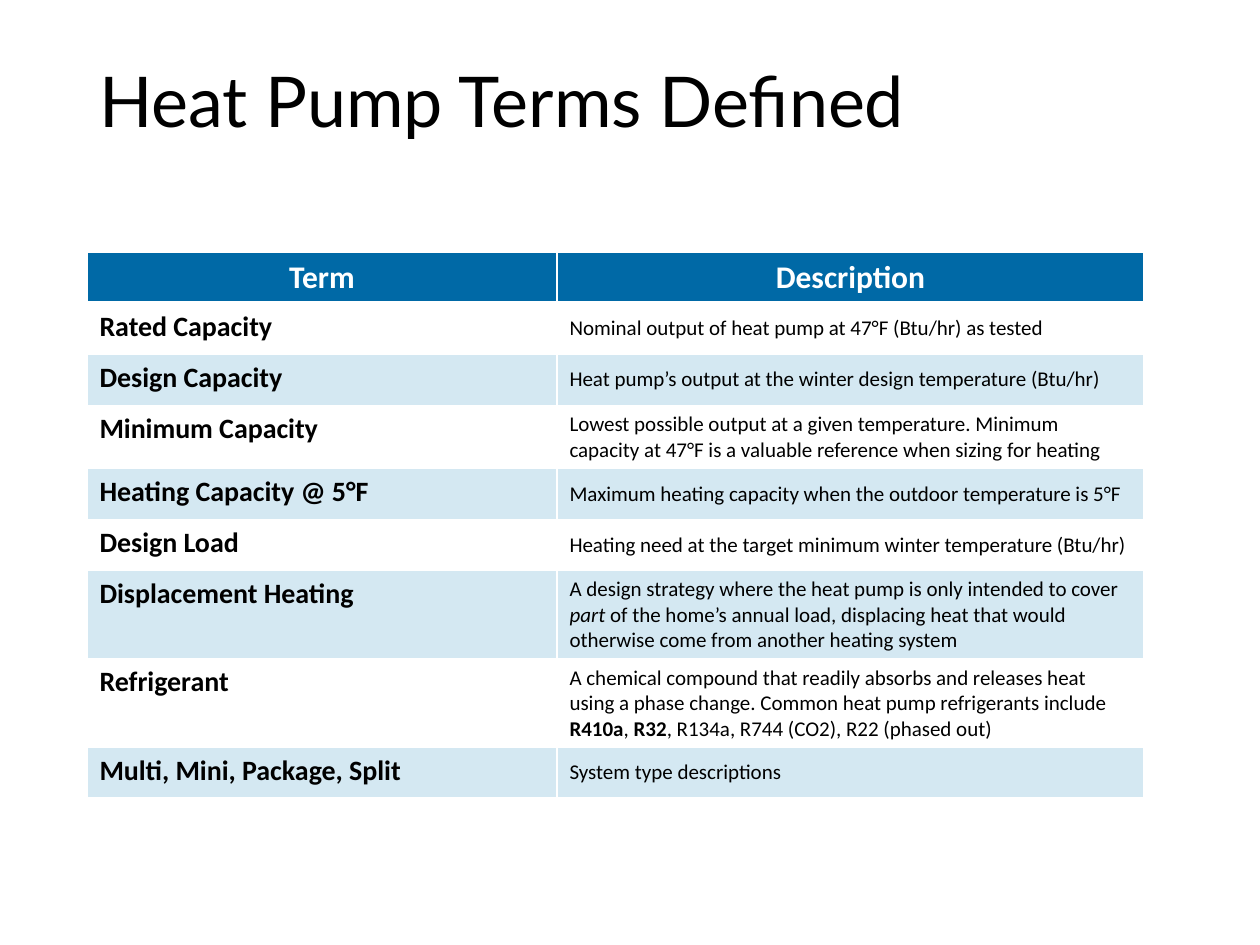
from lxml import etree
from pptx import Presentation
from pptx import util as u
from pptx.dml.color import RGBColor
from pptx.enum import text
from pptx.oxml.ns import qn

COLORS = {"header": "0069A6", "band": "D4E8F2", "white": "FFFFFF", "ink": "000000"}

TERMS = [
    ("Rated Capacity", ["Nominal output of heat pump at 47°F (Btu/hr) as tested"]),
    ("Design Capacity", ["Heat pump’s output at the winter design temperature (Btu/hr)"]),
    ("Minimum Capacity", [
        "Lowest possible output at a given temperature. Minimum capacity at 47°F "
        "is a valuable reference when sizing for heating"]),
    ("Heating Capacity @ 5°F", ["Maximum heating capacity when the outdoor temperature is 5°F"]),
    ("Design Load", ["Heating need at the target minimum winter temperature (Btu/hr)"]),
    ("Displacement Heating", [
        "A design strategy where the heat pump is only intended to cover ",
        ("part ", {"italic": True}),
        "of the home’s annual load, displacing heat that would otherwise come "
        "from another heating system"]),
    ("Refrigerant", [
        "A chemical compound that readily absorbs and releases heat using a phase "
        "change. Common heat pump refrigerants include ",
        ("R410a", {"bold": True}),
        ",",
        (" R32", {"bold": True}),
        ", R134a, R744 (CO2), R22 (phased out)"]),
    ("Multi, Mini, Package, Split", ["System type descriptions"]),
]


def write(paragraph, words, size=12, font="Calibri", color="ink", bold=False, italic=False):
    run = paragraph.add_run()
    run.text = words
    run.font.size = u.Pt(size)
    run.font.name = font
    run.font.color.rgb = RGBColor.from_string(COLORS[color])
    run.font.bold = bold
    run.font.italic = italic


class TermSlide:
    def __init__(self, deck):
        self.slide = deck.slides.add_slide(deck.slide_layouts[6])

    def title(self, words, left, top, width, height):
        heading = self.slide.shapes.add_textbox(
            u.Inches(left), u.Inches(top), u.Inches(width), u.Inches(height)).text_frame
        heading.word_wrap = True
        heading.vertical_anchor = text.MSO_ANCHOR.MIDDLE
        heading.paragraphs[0].line_spacing = 0.9
        write(heading.paragraphs[0], words, size=40, font="Lato")

    def border(self, cell, thick_edge=None):
        properties = cell._tc.get_or_add_tcPr()
        for position, edge in enumerate(("lnL", "lnR", "lnT", "lnB")):
            line = etree.Element(qn(f"a:{edge}"), w=str(u.Pt(3 if edge == thick_edge else 1)))
            fill = etree.SubElement(line, qn("a:solidFill"))
            etree.SubElement(fill, qn("a:srgbClr"), val=COLORS["white"])
            properties.insert(position, line)

    def cell(self, cell, pieces, fill, centered=False, middle=False, thick_edge=None, **style):
        cell.fill.solid()
        cell.fill.fore_color.rgb = RGBColor.from_string(COLORS[fill])
        self.border(cell, thick_edge)
        if middle:
            cell.vertical_anchor = text.MSO_ANCHOR.MIDDLE
        paragraph = cell.text_frame.paragraphs[0]
        if centered:
            paragraph.alignment = text.PP_ALIGN.CENTER
        for piece in pieces:
            words, emphasis = (piece, {}) if isinstance(piece, str) else piece
            write(paragraph, words, **{**style, **emphasis})

    def glossary(self, headings, terms, left, top, widths, height):
        table = self.slide.shapes.add_table(
            len(terms) + 1, len(headings), u.Inches(left), u.Inches(top),
            u.Inches(sum(widths)), u.Inches(height)).table
        for column, width in zip(table.columns, widths):
            column.width = u.Inches(width)
        for column, heading in enumerate(headings):
            self.cell(table.cell(0, column), [heading], "header", centered=True,
                      thick_edge="lnB", size=18, color="white", bold=True)
        for row, (term, description) in enumerate(terms, start=1):
            fill = "white" if row % 2 else "band"
            self.cell(table.cell(row, 0), [term], fill, size=16, bold=True,
                      thick_edge="lnT" if row == 1 else None)
            self.cell(table.cell(row, 1), description, fill, middle=True,
                      thick_edge="lnT" if row == 1 else None)


def main():
    deck = Presentation()
    deck.slide_width, deck.slide_height = u.Inches(10), u.Inches(7.5)
    page = TermSlide(deck)
    page.title("Heat Pump Terms Defined", 0.69, 0.4, 8.62, 0.86)
    page.glossary(("Term", "Description"), TERMS, 0.69, 2, (3.73, 4.66), 3.65)
    deck.save("out.pptx")


if __name__ == "__main__":
    main()
